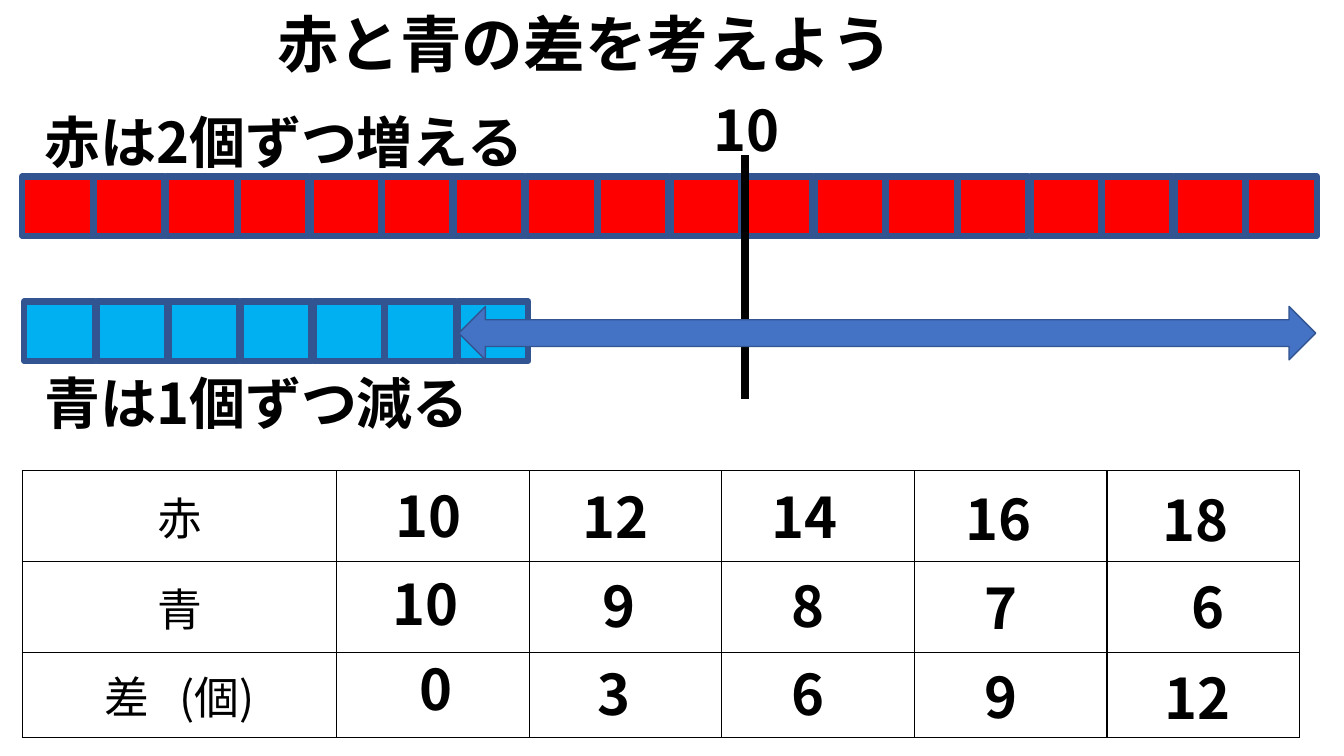
from dataclasses import dataclass

from lxml.etree import SubElement
from pptx import Presentation
from pptx.dml.color import RGBColor
from pptx.enum.shapes import MSO_CONNECTOR, MSO_SHAPE
from pptx.enum.text import MSO_ANCHOR, PP_ALIGN
from pptx.oxml.ns import qn
from pptx.util import Emu, Pt

EMU_PER_PX = 9144  # 100 px to the inch


@dataclass(frozen=True)
class Theme:
    font: str = "Noto Sans CJK JP"
    ink: str = "000000"
    paper: str = "FFFFFF"
    red: str = "FF0000"
    blue: str = "00B0F0"
    arrow: str = "4472C4"
    outline: str = "325491"
    title_size: int = 44
    label_size: int = 40
    header_size: int = 32


@dataclass(frozen=True)
class Box:
    left: int
    top: int
    width: int
    height: int

    def emu(self):
        return [px(length) for length in (self.left, self.top, self.width, self.height)]


THEME = Theme()

# Each value with its left and top inside the table
TABLE_VALUES = [
    [("10", 360, 6), ("12", 546, 7), ("14", 733, 7), ("16", 926, 9), ("18", 1121, 10)],
    [("10", 357, 93), ("9", 566, 95), ("8", 753, 95), ("7", 945, 97), ("6", 1150, 96)],
    [("0", 384, 177), ("3", 561, 182), ("6", 753, 182), ("9", 945, 185), ("12", 1123, 186)],
]
TABLE_HEADERS = [["赤"], ["青"], ["差", " ", "(個)"]]


def px(length):
    return Emu(round(length * EMU_PER_PX))


def color(value):
    return RGBColor.from_string(value)


def add_run(paragraph, text, size, bold):
    run = paragraph.add_run()
    run.text = text
    formats = {"size": Pt(size), "bold": bold, "name": THEME.font}
    for name, value in formats.items():
        setattr(run.font, name, value)
    run.font.color.rgb = color(THEME.ink)
    properties = run.font._element
    SubElement(properties, qn("a:ea")).set("typeface", THEME.font)
    return properties


def add_label(slide, box, text, size=THEME.label_size):
    frame = slide.shapes.add_textbox(*box.emu()).text_frame
    frame.word_wrap = True
    add_run(frame.paragraphs[0], text, size, True)


def add_block(slide, kind, box, fill, line_width):
    shape = slide.shapes.add_shape(kind, *box.emu())
    shape.shadow.inherit = False
    shape.fill.solid()
    shape.fill.fore_color.rgb = color(fill)
    shape.line.color.rgb = color(THEME.outline)
    shape.line.width = Pt(line_width)


def add_counter_row(slide, box, count, fill):
    """Squares spread evenly from the left to the right edge of the box."""
    square = 70
    pitch = (box.width - square) / (count - 1)
    for index in range(count):
        place = Box(round(box.left + index * pitch), box.top, square, box.height)
        add_block(slide, MSO_SHAPE.RECTANGLE, place, fill, 4.5)


def add_ten_mark(slide, box):
    """The upright line at ten, with its number above."""
    add_label(slide, Box(box.left - 41, box.top - 64, 114, 77), "10")
    line = slide.shapes.add_connector(
        MSO_CONNECTOR.STRAIGHT, px(box.left), px(box.top),
        px(box.left), px(box.top + box.height))
    line.line.color.rgb = color(THEME.ink)
    line.line.width = Pt(6)
    SubElement(line._element.spPr, qn("a:effectLst"))


def style_cell(cell):
    cell.fill.background()
    cell.vertical_anchor = MSO_ANCHOR.MIDDLE
    properties = cell._tc.get_or_add_tcPr()
    for index, side in enumerate(("lnL", "lnR", "lnT", "lnB")):
        border = properties.makeelement(qn(f"a:{side}"), {"w": str(Pt(1))})
        fill = SubElement(border, qn("a:solidFill"))
        SubElement(fill, qn("a:srgbClr")).set("val", THEME.ink)
        properties.insert(index, border)


def add_difference_table(slide, box):
    """Ruled table with row headers, and the values laid over it."""
    row_heights = [90, 90, 85]
    column_widths = [312] + [191] * 5
    table = slide.shapes.add_table(
        len(row_heights), len(column_widths), *box.emu()).table
    for name in ("first_row", "horz_banding"):
        setattr(table, name, False)
    for column, width in zip(table.columns, column_widths):
        column.width = px(width)
    for row, height in zip(table.rows, row_heights):
        row.height = px(height)
    for cell in table.iter_cells():
        style_cell(cell)
    for index, parts in enumerate(TABLE_HEADERS):
        paragraph = table.cell(index, 0).text_frame.paragraphs[0]
        paragraph.alignment = PP_ALIGN.CENTER
        for part in parts:
            properties = add_run(paragraph, part, THEME.header_size, False)
            if part == " ":
                properties.set("spc", "1440")  # widen the gap before the unit
    for row in TABLE_VALUES:
        for text, left, top in row:
            add_label(slide, Box(box.left + left, box.top + top, 87, 77), text)


def build_slide(presentation):
    slide = presentation.slides.add_slide(presentation.slide_layouts[6])
    slide.background.fill.solid()
    slide.background.fill.fore_color.rgb = color(THEME.paper)

    # Table of counts and differences
    add_difference_table(slide, Box(22, 467, 1267, 265))

    # Red and blue counters with their captions
    add_label(slide, Box(34, 102, 596, 77), "赤は2個ずつ増える")
    add_label(slide, Box(34, 361, 596, 77), "青は1個ずつ減る")
    add_counter_row(slide, Box(22, 175, 1284, 59), 18, THEME.red)
    add_counter_row(slide, Box(24, 299, 500, 59), 7, THEME.blue)

    # Mark at ten, and the arrow that spans the difference
    add_ten_mark(slide, Box(739, 154, 0, 242))
    add_block(slide, MSO_SHAPE.LEFT_RIGHT_ARROW, Box(455, 304, 850, 53), THEME.arrow, 1)

    # Title
    add_label(slide, Box(265, 1, 867, 84), "赤と青の差を考えよう", THEME.title_size)


def main():
    presentation = Presentation()
    presentation.slide_width = px(1333)
    presentation.slide_height = px(750)
    build_slide(presentation)
    presentation.save("out.pptx")


if __name__ == "__main__":
    main()
